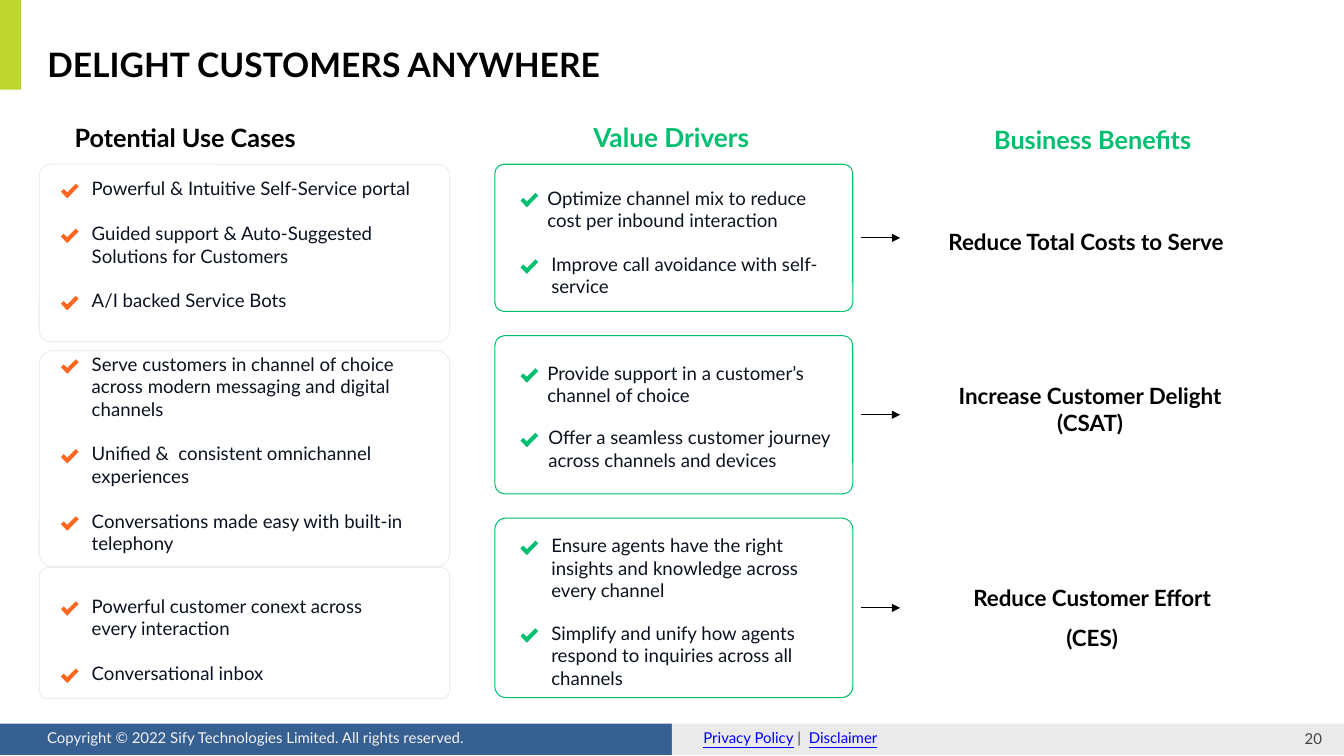
from lxml import etree
from pptx import Presentation
from pptx.dml.color import RGBColor
from pptx.enum.shapes import MSO_CONNECTOR, MSO_SHAPE
from pptx.enum.text import MSO_ANCHOR, PP_ALIGN
from pptx.oxml.ns import qn
from pptx.util import Inches, Pt

RECT, ROUNDED = MSO_SHAPE.RECTANGLE, MSO_SHAPE.ROUNDED_RECTANGLE
STRAIGHT = MSO_CONNECTOR.STRAIGHT
LEFT, CENTER = PP_ALIGN.LEFT, PP_ALIGN.CENTER
TOP, MIDDLE = MSO_ANCHOR.TOP, MSO_ANCHOR.MIDDLE

BLACK = RGBColor(0x00, 0x00, 0x00)
WHITE = RGBColor(0xFF, 0xFF, 0xFF)
INK = RGBColor(0x0B, 0x13, 0x20)
GREEN = RGBColor(0x00, 0xBF, 0x6F)
ORANGE = RGBColor(0xFF, 0x67, 0x20)
LIME = RGBColor(0xBE, 0xD7, 0x30)
NAVY = RGBColor(0x37, 0x60, 0x92)
PALE = RGBColor(0xEA, 0xEA, 0xEA)
MIST = RGBColor(0xEB, 0xEF, 0xF2)
LINK = RGBColor(0x00, 0x00, 0xFF)
GREY = RGBColor(0x40, 0x40, 0x40)
NEAR_WHITE = RGBColor(0xF2, 0xF2, 0xF2)

SLIDE_WIDTH, SLIDE_HEIGHT = Inches(13.33), Inches(7.5)
COLUMNS, ROWS = 160, 90
TEXT_LINE = 2.67
CHECK_DROP = 0.65
PADDED = (0.13, 0.13, 0.13, 0.13)
FLUSH = (0, 0, 0, 0)
STANDARD = (0.1, 0.05, 0.1, 0.05)

BODY = {"size": Pt(13.3), "color": INK}
BENEFIT = {"size": Pt(16), "bold": True}
FOOTER = {"size": Pt(10.7), "color": GREY}
FOOTER_LINK = {"size": Pt(10.7), "color": LINK, "underline": True}

USE_CASES = [
    ((19.56, 21.12), 19.56, 42.6, [
        (0, "Powerful & Intuitive Self-Service portal"),
        (2, "Guided support & Auto-Suggested Solutions for Customers"),
        (5, "A/I backed Service Bots")]),
    ((41.76, 25.68), 40.46, 41.28, [
        (0, "Serve customers in channel of choice across modern messaging and digital channels"),
        (4, "Unified &  consistent omnichannel experiences"),
        (7, "Conversations made easy with built-in telephony")]),
    ((67.56, 15.6), 69.26, 40.44, [
        (0, "Powerful customer conext across every interaction"),
        (3, "Conversational inbox")]),
]
DRIVERS = [
    ((19.56, 17.52), [
        (63.6, 20.64, 36.72, "Optimize channel mix to reduce cost per inbound interaction"),
        (64.08, 28.56, 36.72, "Improve call avoidance with self-service")]),
    ((39.96, 18.84), [
        (63.6, 41.52, 40.44, "Provide support in a customer’s channel of choice"),
        (63.72, 49.2, 38.64, "Offer a seamless customer journey across channels and devices")]),
    ((61.68, 21.36), [
        (64.08, 62.04, 36.72,
         "Ensure agents have the right insights and knowledge across every channel"),
        (64.08, 72.48, 34.92,
         "Simplify and unify how agents respond to inquiries across all channels")]),
]
BENEFITS = [
    ((112.92, 27.12, 40.68, 3.84), ["Reduce Total Costs to Serve"],
     {"inset": FLUSH}),
    ((108.48, 43.92, 42.6, 9.72), ["Increase Customer Delight (CSAT)"],
     {"inset": PADDED, "align": CENTER}),
    ((109.68, 67.92, 40.68, 9.72), ["Reduce Customer Effort", "(CES)"],
     {"inset": FLUSH, "align": CENTER, "spacing": 1.5}),
]
HEADINGS = [
    ((7.32, 12.96, 43.56, 6.96), "Potential Use Cases", 18, BLACK, LEFT),
    ((60.36, 12.84, 39.12, 6.96), "Value Drivers", 18.7, GREEN, CENTER),
    ((112.44, 13.2, 35.28, 6.84), "Business Benefits", 18, GREEN, CENTER),
]


def across(columns):
    return round(SLIDE_WIDTH * columns / COLUMNS)


def down(rows):
    return round(SLIDE_HEIGHT * rows / ROWS)


def place(area):
    left, top, width, height = area
    return across(left), down(top), across(width), down(height)


def add_block(page, area, fill, kind=RECT, line=None, rotation=0):
    block = page.shapes.add_shape(kind, *place(area))
    block.shadow.inherit = False
    block.rotation = rotation
    block.fill.solid()
    block.fill.fore_color.rgb = fill
    if line is None:
        block.line.fill.background()
    else:
        block.line.color.rgb = line
        block.line.width = Pt(0.75)
    return block


def add_card(page, area, line):
    card = add_block(page, area, WHITE, ROUNDED, line)
    card.adjustments[0] = 0.061


def add_check(page, left, top, color):
    add_block(page, (left, top + 0.72, 0.48, 1.08), color, rotation=315)
    add_block(page, (left + 0.72, top, 0.48, 1.92), color, rotation=45)


def add_span(para, text, style):
    span = para.add_run()
    span.text = text
    values = {"name": "Lato", "color": BLACK, **style}
    span.font.color.rgb = values.pop("color")
    for name, value in values.items():
        setattr(span.font, name, value)


def add_text(page, area, paragraphs, inset=STANDARD, anchor=TOP,
             align=LEFT, spacing=None, gap=0):
    box = page.shapes.add_textbox(*place(area))
    frame = box.text_frame
    frame.word_wrap = True
    frame.vertical_anchor = anchor
    sides = ("margin_left", "margin_top", "margin_right", "margin_bottom")
    for side, value in zip(sides, inset):
        setattr(frame, side, Inches(value))
    for index, spans in enumerate(paragraphs):
        para = frame.add_paragraph() if index else frame.paragraphs[0]
        para.alignment = align
        if spacing:
            para.line_spacing = spacing
        if index and gap:
            para.space_before = Pt(gap)
        for text, style in spans:
            add_span(para, text, style)


def add_arrow(page, start, end, row):
    arrow = page.shapes.add_connector(
        STRAIGHT, across(start), down(row), across(end), down(row))
    arrow.line.color.rgb = BLACK
    arrow.line.width = Pt(0.75)
    etree.SubElement(arrow.line._get_or_add_ln(), qn("a:tailEnd"), type="triangle")
    etree.SubElement(arrow._element.spPr, qn("a:effectLst"))


def add_frame(page):
    add_block(page, (0, 86.16, COLUMNS / 2, 3.72), NAVY)
    add_block(page, (COLUMNS / 2, 86.16, COLUMNS / 2, 3.72), PALE)
    add_block(page, (0, 0, 2.52, 10.68), LIME)
    add_text(page, (4.44, 86.16, 68.04, 3.36), [[
        ("Copyright © 2022 Sify Technologies Limited. All rights reserved.",
         {**FOOTER, "color": NEAR_WHITE})]])
    add_text(page, (82.56, 86.16, 52.92, 3.36), [[
        ("Privacy Policy", FOOTER_LINK), (" |  ", FOOTER), ("Disclaimer", FOOTER_LINK)]])
    add_text(page, (151.92, 86.64, 7.32, 2.52), [[("20", FOOTER)]],
             inset=(0.13, 0.07, 0, 0.07), anchor=MIDDLE, align=CENTER)
    add_text(page, (5.64, 4.68, 131.88, 6),
             [[("DELIGHT CUSTOMERS ANYWHERE", {"size": Pt(24), "bold": True})]],
             inset=(0, 0.05, 0.1, 0.05), anchor=MIDDLE)


def add_use_cases(page):
    for (top, height), text_top, text_width, items in USE_CASES:
        add_card(page, (4.68, top, 48.84, height), MIST)
        add_text(page, (9.36, text_top, text_width, 14.76),
                 [[(text, BODY)] for _, text in items], inset=PADDED, gap=16)
        for line, _ in items:
            add_check(page, 7.56, text_top + 1.56 + line * TEXT_LINE + CHECK_DROP, ORANGE)


def add_drivers(page):
    for (top, height), items in DRIVERS:
        add_card(page, (58.92, top, 42.6, height), GREEN)
        for left, text_top, width, text in items:
            add_text(page, (left, text_top, width, 5.88), [[(text, BODY)]], inset=PADDED)
            add_check(page, 62.28, text_top + 1.56 + CHECK_DROP, GREEN)
        add_arrow(page, 102.48, 107.16, top + height / 2)


def main():
    deck = Presentation()
    deck.slide_width, deck.slide_height = SLIDE_WIDTH, SLIDE_HEIGHT
    page = deck.slides.add_slide(deck.slide_layouts[6])
    add_frame(page)
    for area, text, size, color, align in HEADINGS:
        style = {"size": Pt(size), "color": color, "bold": True}
        add_text(page, area, [[(text, style)]], inset=PADDED, align=align)
    add_use_cases(page)
    add_drivers(page)
    for area, lines, layout in BENEFITS:
        add_text(page, area, [[(text, BENEFIT)] for text in lines], **layout)
    deck.save("out.pptx")


if __name__ == "__main__":
    main()
